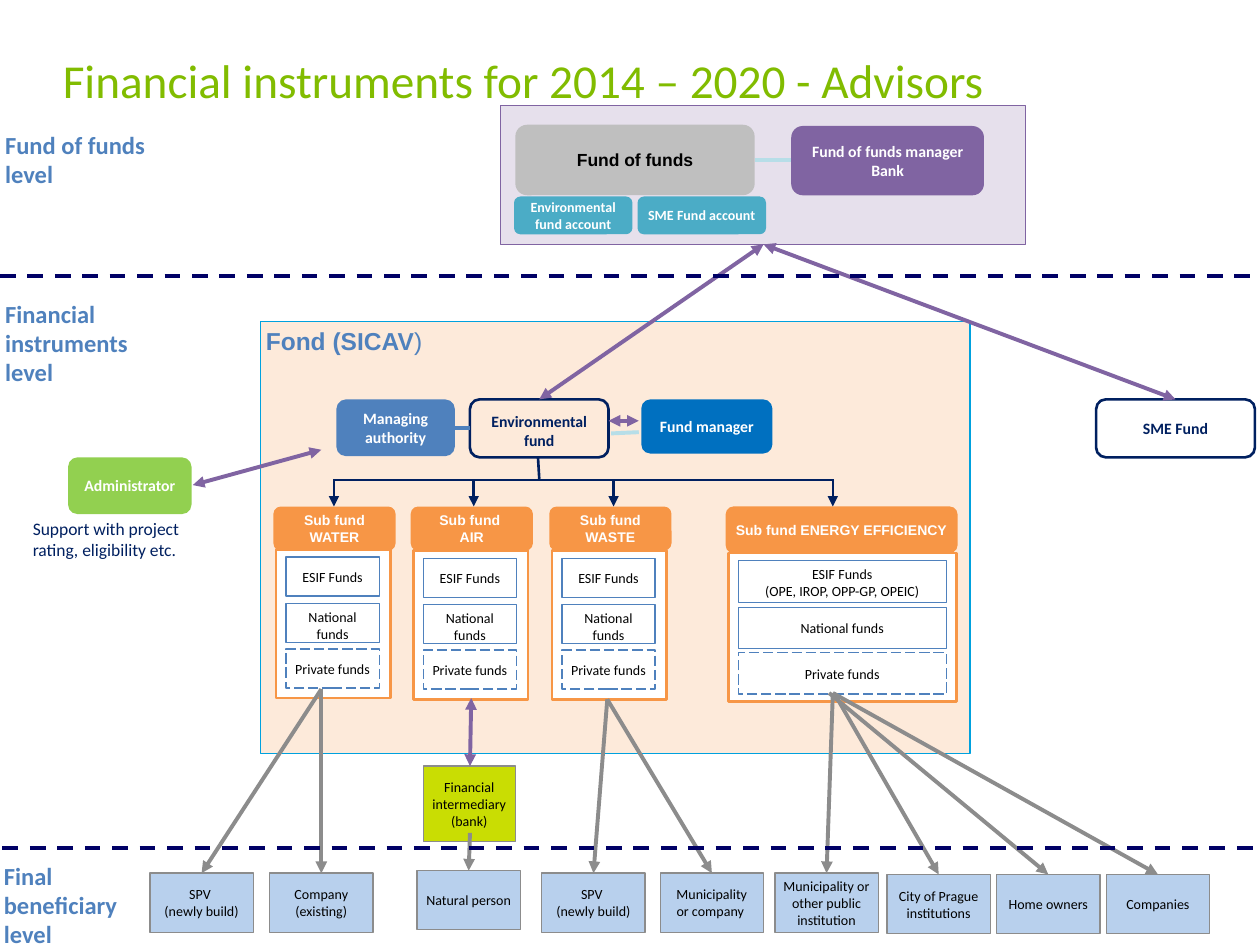
from dataclasses import dataclass
from typing import NamedTuple, Optional

from pptx import Presentation, util as u
from pptx.dml.color import RGBColor
from pptx.enum import dml, shapes, text
from pptx.oxml.ns import qn
from lxml import etree

PX = 9144
LIME = RGBColor(0x81, 0xBC, 0x00)
BLUE = RGBColor(0x4F, 0x81, 0xBD)
CYAN = RGBColor(0x00, 0xA1, 0xDE)
PEACH = RGBColor(0xFD, 0xEA, 0xDA)
LILAC = RGBColor(0xE6, 0xE0, 0xEC)
PURPLE = RGBColor(0x80, 0x64, 0xA2)
SILVER = RGBColor(0xBF, 0xBF, 0xBF)
TEAL = RGBColor(0x4B, 0xAC, 0xC6)
PALE_TEAL = RGBColor(0xB7, 0xDE, 0xE8)
NAVY = RGBColor(0x00, 0x20, 0x60)
DARK_BLUE = RGBColor(0x00, 0x00, 0x66)
ORANGE = RGBColor(0xF7, 0x96, 0x46)
GREEN = RGBColor(0x92, 0xD0, 0x50)
AZURE = RGBColor(0x00, 0x70, 0xC0)
ICE = RGBColor(0xB8, 0xD0, 0xED)
ACID = RGBColor(0xC9, 0xDD, 0x03)
GREY = RGBColor(0x8C, 0x8C, 0x8C)
BLACK = RGBColor(0, 0, 0)
WHITE = RGBColor(0xFF, 0xFF, 0xFF)

RECT = shapes.MSO_SHAPE.RECTANGLE
ROUND = shapes.MSO_SHAPE.ROUNDED_RECTANGLE
TAB = shapes.MSO_SHAPE.FLOWCHART_ALTERNATE_PROCESS
TOP, MID, BOTTOM = text.MSO_ANCHOR.TOP, text.MSO_ANCHOR.MIDDLE, text.MSO_ANCHOR.BOTTOM
LEFT, CENTER = text.PP_ALIGN.LEFT, text.PP_ALIGN.CENTER
DASH, LONG_DASH = dml.MSO_LINE.DASH, dml.MSO_LINE.LONG_DASH


@dataclass
class Box:
    x: int
    y: int
    w: int
    h: int
    txt: str = ""
    fill: Optional[RGBColor] = None
    line: Optional[RGBColor] = None
    width: float = 0.75
    dash: Optional[dml.MSO_LINE] = None
    kind: shapes.MSO_SHAPE = ROUND
    size: int = 9
    color: RGBColor = WHITE
    bold: bool = True
    font: str = "Calibri"
    anchor: text.MSO_ANCHOR = MID
    align: text.PP_ALIGN = CENTER
    side: int = 4


class Link(NamedTuple):
    x1: int
    y1: int
    x2: int
    y2: int
    color: RGBColor
    head: bool = False
    tail: bool = False
    width: float = 2.25
    dash: Optional[dml.MSO_LINE] = None


class Column(NamedTuple):
    name: str
    x: int
    top: int
    head_w: int
    head_h: int
    panel_w: int
    item_w: int
    item_h: int
    items: tuple


class Beneficiary(NamedTuple):
    txt: str
    x: int
    y: int
    from_x: int
    from_y: int


def put_text(sp, txt: str, *, size=9, color=BLACK, bold=False, font="Calibri",
             anchor=TOP, align=LEFT, side=4):
    tf = sp.text_frame
    tf.word_wrap, tf.vertical_anchor = True, anchor
    tf.margin_left = tf.margin_right = side * PX
    tf.margin_top = tf.margin_bottom = 4 * PX
    for i, part in enumerate(txt.split("|")):
        p = tf.paragraphs[0] if i == 0 else tf.add_paragraph()
        p.text, p.alignment = part, align
        for r in p.runs:
            r.font.size, r.font.name, r.font.bold = u.Pt(size), font, bold
            r.font.color.rgb = color
    return tf


def draw_box(s, b: Box):
    sp = s.shapes.add_shape(b.kind, b.x * PX, b.y * PX, b.w * PX, b.h * PX)
    sp.shadow.inherit = False
    if b.fill is None:
        sp.fill.background()
    else:
        sp.fill.solid()
        sp.fill.fore_color.rgb = b.fill
    if b.line is None:
        sp.line.fill.background()
    else:
        sp.line.color.rgb, sp.line.width = b.line, u.Pt(b.width)
        if b.dash:
            sp.line.dash_style = b.dash
    if b.txt:
        put_text(sp, b.txt, size=b.size, color=b.color, bold=b.bold, font=b.font,
                 anchor=b.anchor, align=b.align, side=b.side)
    return sp


def draw_link(s, k: Link) -> None:
    c = s.shapes.add_connector(shapes.MSO_CONNECTOR.STRAIGHT,
                               k.x1 * PX, k.y1 * PX, k.x2 * PX, k.y2 * PX)
    c.line.color.rgb, c.line.width = k.color, u.Pt(k.width)
    if k.dash:
        c.line.dash_style = k.dash
    ln = c.line._get_or_add_ln()
    for tag, wanted in (("a:headEnd", k.head), ("a:tailEnd", k.tail)):
        if wanted:
            etree.SubElement(ln, qn(tag)).set("type", "triangle")
    etree.SubElement(c._element.spPr, qn("a:effectLst"))


def draw_label(s, x: int, y: int, w: int, h: int, txt: str, **fmt) -> None:
    put_text(s.shapes.add_textbox(x * PX, y * PX, w * PX, h * PX), txt, **fmt)


def draw_column(s, c: Column) -> None:
    draw_box(s, Box(c.x, 402, c.head_w, c.head_h, c.name, ORANGE, kind=TAB, size=8, font="Arial"))
    draw_box(s, Box(c.x + 2, c.top, c.panel_w, 118, fill=WHITE, line=ORANGE, width=1.5, kind=RECT))
    for txt, dy in zip(c.items, (6, 43, 79)):
        draw_box(s, Box(c.x + 10, c.top + dy, c.item_w, c.item_h, txt, line=BLUE, kind=RECT,
                        size=8, color=BLACK, bold=False,
                        dash=LONG_DASH if txt.startswith("Private") else None,
                        anchor=TOP if "\n" in txt or "|" in txt else MID))


FUNDS = ("ESIF Funds", "National\nfunds", "Private funds")
ENERGY_FUNDS = ("ESIF Funds|(OPE, IROP, OPP-GP, OPEIC)", "National funds", "Private funds")
COLUMNS = [
    Column("Sub fund WATER", 217, 436, 97, 35, 91, 74, 31, FUNDS),
    Column("Sub fund \nAIR", 326, 437, 97, 35, 91, 74, 31, FUNDS),
    Column("Sub fund WASTE", 436, 437, 97, 35, 91, 74, 31, FUNDS),
    Column("Sub fund ENERGY EFFICIENCY", 576, 439, 184, 37, 181, 165, 33, ENERGY_FUNDS),
]
BOXES = [
    Box(397, 84, 417, 110, fill=LILAC, line=PURPLE, kind=RECT),
    Box(409, 99, 190, 56, "Fund of funds", SILVER, size=10, color=BLACK, font="Arial"),
    Box(628, 100, 153, 55, "Fund of funds manager|Bank", PURPLE),
    Box(408, 156, 94, 30, "Environmental fund account", TEAL, size=8),
    Box(506, 156, 102, 30, "SME Fund account", TEAL, size=8),
    Box(373, 317, 110, 46, "Environmental fund", line=NAVY, width=1.5, color=NAVY, anchor=BOTTOM),
    Box(870, 317, 126, 46, "SME Fund", line=NAVY, width=1.5, color=NAVY),
    Box(54, 363, 98, 45, "Administrator", GREEN),
    Box(267, 317, 94, 45, "Managing authority", BLUE),
    Box(509, 317, 104, 43, "Fund manager", AZURE),
    Box(336, 608, 73, 60, "Financial intermediary (bank)", ACID, GREY, kind=RECT,
        size=8, color=BLACK, bold=False, side=0),
]
BENEFICIARIES = [
    Beneficiary("SPV |(newly build)", 119, 693, 255, 547),
    Beneficiary("Company|(existing)", 214, 693, 255, 547),
    Beneficiary("Natural person", 331, 691, 373, 661),
    Beneficiary("SPV |(newly build)", 430, 693, 482, 555),
    Beneficiary("Municipality\nor company ", 524, 693, 482, 555),
    Beneficiary("Municipality or other public institution", 615, 693, 661, 550),
    Beneficiary("City of Prague institutions", 704, 694, 662, 550),
    Beneficiary("Home owners", 791, 694, 658, 550),
    Beneficiary("Companies", 878, 694, 661, 550),
]
LINKS = [
    Link(427, 363, 428, 380, NAVY, width=1.5),
    Link(662, 381, 264, 381, NAVY, width=1.5),
    *(Link(x, 381, x, 402, NAVY, tail=True, width=1.5) for x in (265, 376, 487, 661)),
    Link(428, 317, 606, 194, PURPLE, True, True),
    Link(933, 317, 606, 194, PURPLE, True, True),
    Link(153, 385, 255, 357, PURPLE, True, True),
    Link(483, 334, 507, 334, PURPLE, True, True),
    Link(373, 608, 374, 554, PURPLE, True, True),
    Link(599, 127, 628, 127, PALE_TEAL),
    Link(485, 344, 507, 343, PALE_TEAL),
    Link(361, 340, 373, 340, BLUE),
    *(Link(b.x + 41, b.y, b.from_x, b.from_y, GREY, head=True) for b in BENEFICIARIES),
    Link(0, 219, 1064, 219, DARK_BLUE, dash=DASH),
    Link(2, 673, 1064, 673, DARK_BLUE, dash=DASH),
]
LEVELS = [(0, 99, "Fund of funds level"), (0, 233, "Financial instruments level"),
          (-1, 679, "Final beneficiary level")]


def main() -> None:
    prs = Presentation()
    prs.slide_width, prs.slide_height = 1000 * PX, 750 * PX
    s = prs.slides.add_slide(prs.slide_layouts[6])
    draw_label(s, 40, 39, 933, 49, "Financial instruments for 2014 – 2020 - Advisors",
               size=27, color=LIME, anchor=MID, side=10)
    sicav = draw_box(s, Box(207, 255, 563, 343, "Fond (SICAV", PEACH, CYAN, kind=RECT, size=14,
                            color=BLUE, font="Arial", anchor=TOP, align=LEFT))
    r = sicav.text_frame.paragraphs[0].add_run()
    r.text = ")"
    r.font.size, r.font.name, r.font.color.rgb = u.Pt(14), "Arial", BLUE
    for b in BOXES:
        draw_box(s, b)
    for c in COLUMNS:
        draw_column(s, c)
    for n in BENEFICIARIES:
        draw_box(s, Box(n.x, n.y, 82, 47, n.txt, ICE, GREY, kind=RECT, size=8,
                        color=BLACK, bold=False, side=0))
    for k in LINKS:
        draw_link(s, k)
    draw_label(s, 22, 407, 131, 50, "Support with project rating, eligibility etc.",
               size=10, color=NAVY)
    for x, y, txt in LEVELS:
        draw_label(s, x, y, 132, 51, txt, size=14, color=BLUE, bold=True)
    prs.save("out.pptx")


if __name__ == "__main__":
    main()
